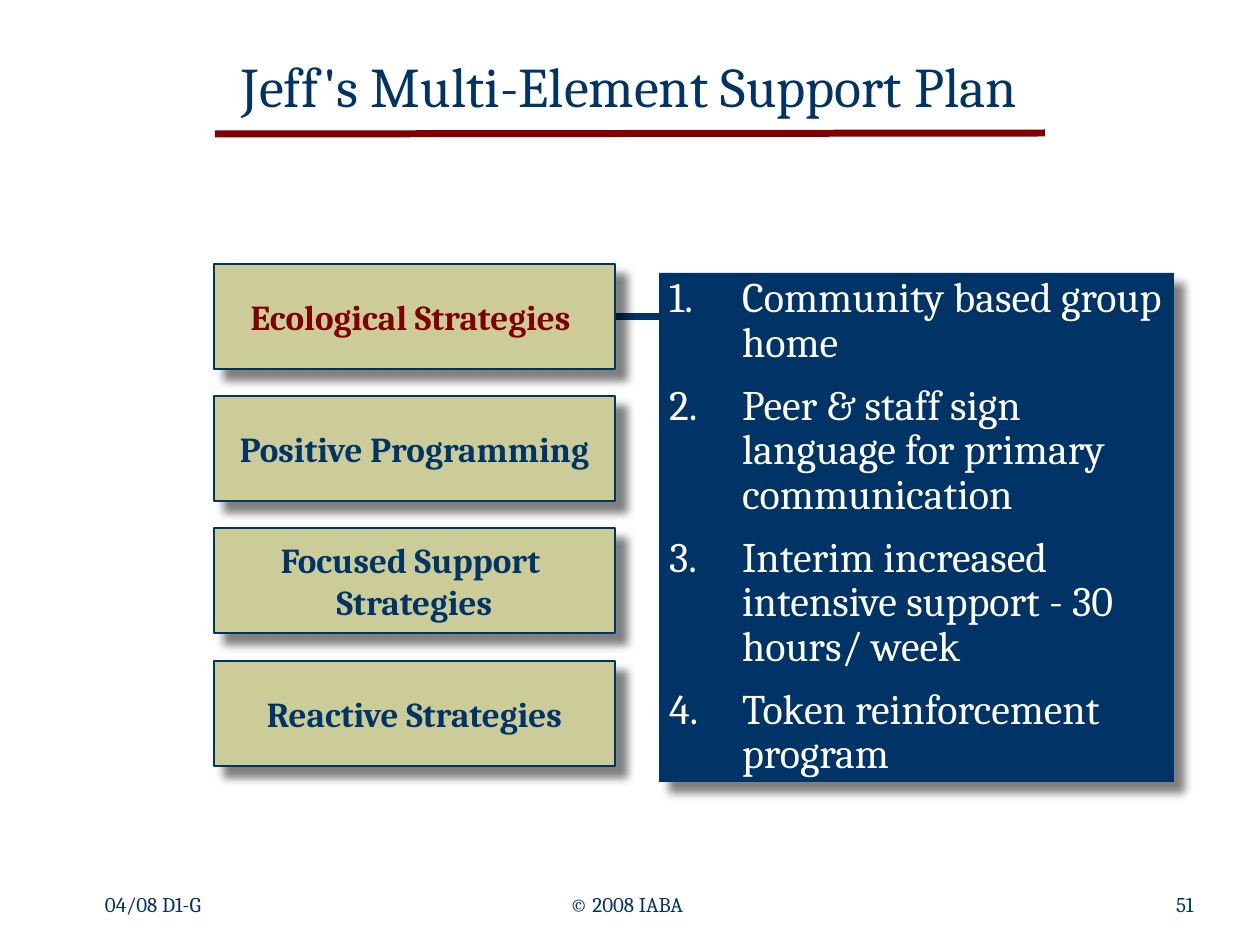
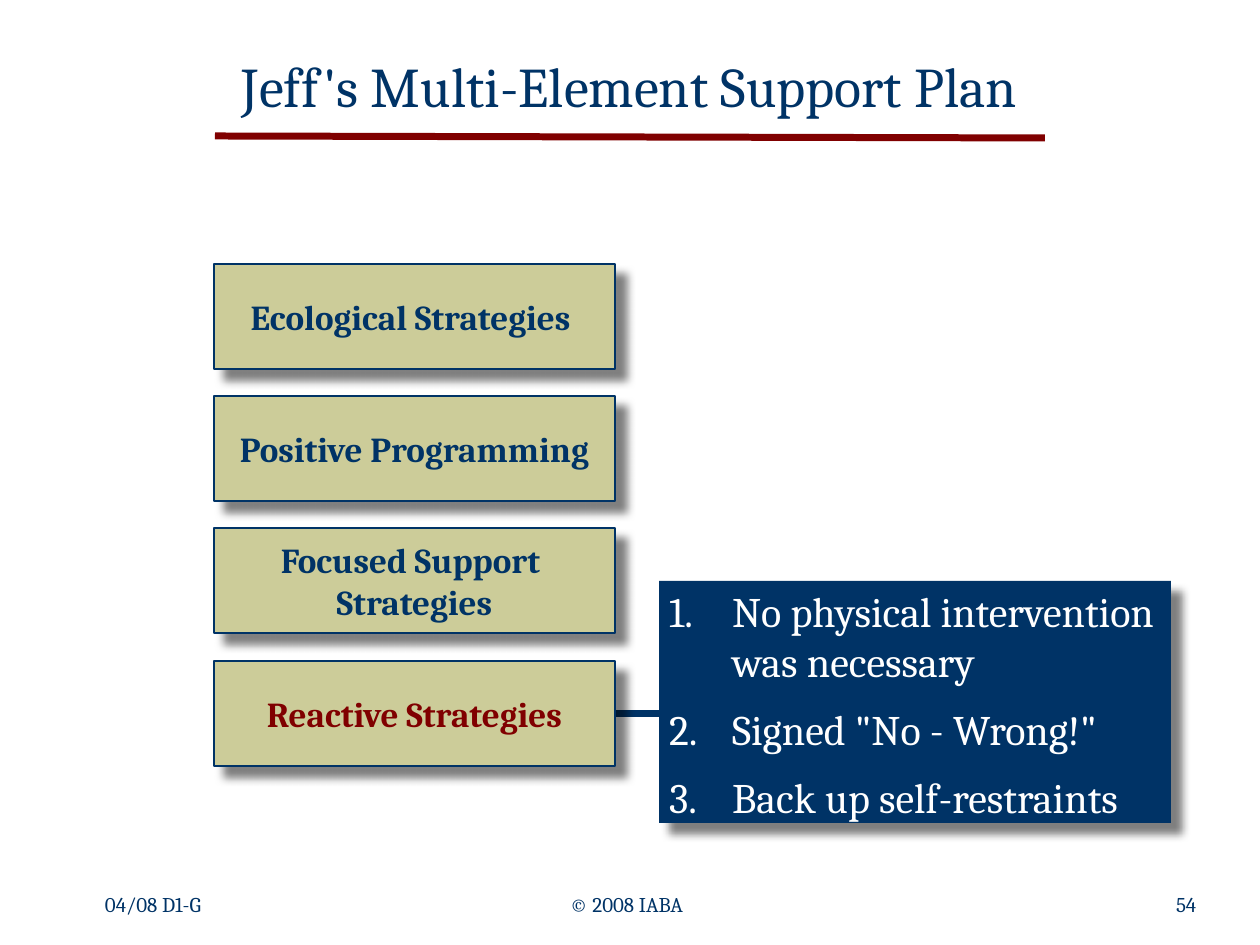
from lxml.etree import SubElement
from pptx import Presentation
from pptx.dml.color import RGBColor
from pptx.enum.shapes import MSO_CONNECTOR, MSO_SHAPE
from pptx.enum.text import MSO_ANCHOR, MSO_AUTO_SIZE, PP_ALIGN
from pptx.oxml.ns import qn
from pptx.util import Pt

EMU_PER_PX = 914400 / 126
FONT = "Cambria"
NAVY, MAROON, SAND, WHITE = "003366", "800000", "CCCC99", "FFFFFF"

TITLE = "Jeff's Multi-Element Support Plan"
STRATEGIES = [
    "Ecological Strategies ",
    "Positive Programming",
    "Focused Support \nStrategies",
    "Reactive Strategies",
]
STRATEGY_LEFT, STRATEGY_TOP, STRATEGY_WIDTH, STRATEGY_HEIGHT = 214, 264, 401, 105
PANEL_LEFT = 659

PLANS = [
    {
        "active": 0,
        "number": "51",
        "rule_ends": (134, 133),
        "panel_box": (PANEL_LEFT, 273, 515, 509),
        "panel_format": {"number_indent": 73, "line_spacing": 0.89},
        "actions": [
            "Community based group home",
            "Peer & staff sign language for primary communication",
            "Interim increased intensive support - 30 hours/ week",
            "Token reinforcement program",
        ],
    },
    {
        "active": 3,
        "number": "54",
        "rule_ends": (136, 138),
        "panel_box": (PANEL_LEFT, 581, 512, 242),
        "panel_format": {"number_indent": 63},
        "actions": [
            "No physical intervention was necessary",
            'Signed "No - Wrong!"',
            "Back up self-restraints",
        ],
    },
]


def px(length):
    return round(length * EMU_PER_PX)


def rgb(hex_color):
    return RGBColor.from_string(hex_color)


def place(shape, box):
    shape.left, shape.top, shape.width, shape.height = map(px, box)


def number_paragraph(paragraph, indent, color):
    properties = paragraph._p.get_or_add_pPr()
    properties.set("marL", str(px(indent)))
    properties.set("indent", str(-px(indent)))
    number_color = SubElement(properties, qn("a:buClr"))
    SubElement(number_color, qn("a:srgbClr"), val=color)
    SubElement(properties, qn("a:buFont"), typeface=FONT)
    SubElement(properties, qn("a:buAutoNum"), type="arabicPeriod")


def write_text(frame, *lines, size, color=NAVY, bold=False, align=PP_ALIGN.LEFT,
               anchor=MSO_ANCHOR.TOP, insets=(13, 6), wrap=True,
               fit=MSO_AUTO_SIZE.NONE, line_spacing=1.0, gap=0, number_indent=0):
    frame.word_wrap = wrap
    frame.auto_size = fit
    frame.vertical_anchor = anchor
    frame.margin_left = frame.margin_right = px(insets[0])
    frame.margin_top = frame.margin_bottom = px(insets[1])
    for index, line in enumerate(lines):
        paragraph = frame.add_paragraph() if index else frame.paragraphs[0]
        paragraph.text = line
        if number_indent:
            number_paragraph(paragraph, number_indent, color)
        paragraph.alignment = align
        paragraph.line_spacing = line_spacing
        paragraph.space_before = Pt(gap if index else 0)
        for run in paragraph.runs:
            run.font.name = FONT
            run.font.size = Pt(size)
            run.font.bold = bold
            run.font.color.rgb = rgb(color)


def cast_shadow(shape):
    effects = SubElement(shape._element.spPr, qn("a:effectLst"))
    shadow = SubElement(effects, qn("a:outerShdw"), blurRad=str(Pt(5)),
                        dist=str(Pt(8.5)), dir="2700000", algn="ctr", rotWithShape="0")
    shadow_color = SubElement(shadow, qn("a:srgbClr"), val="000000")
    SubElement(shadow_color, qn("a:alpha"), val="50000")


def add_line(slide, start, end, color):
    line = slide.shapes.add_connector(MSO_CONNECTOR.STRAIGHT, *map(px, start + end))
    line.line.color.rgb = rgb(color)
    line.line.width = Pt(4)
    SubElement(line._element.spPr, qn("a:effectLst"))
    return line


def add_title(slide, rule_ends):
    title = slide.shapes.title
    place(title, (220, 53, 820, 72))
    write_text(title.text_frame, TITLE, size=32, align=PP_ALIGN.CENTER,
               insets=(10, 4), line_spacing=0.94)
    add_line(slide, (215, rule_ends[0]), (1045, rule_ends[1]), MAROON)


def add_strategy(slide, index, color):
    top = STRATEGY_TOP + index * 397 // 3
    strategy = slide.shapes.add_shape(
        MSO_SHAPE.RECTANGLE,
        *map(px, (STRATEGY_LEFT, top, STRATEGY_WIDTH, STRATEGY_HEIGHT)))
    strategy.fill.solid()
    strategy.fill.fore_color.rgb = rgb(SAND)
    strategy.line.color.rgb = rgb(NAVY)
    strategy.line.width = Pt(1)
    cast_shadow(strategy)
    write_text(strategy.text_frame, STRATEGIES[index], size=20, color=color, bold=True,
               align=PP_ALIGN.CENTER, anchor=MSO_ANCHOR.MIDDLE,
               insets=(14, 8), wrap=False)
    return strategy


def add_strategies(slide, active):
    link = add_line(slide, (STRATEGY_LEFT + STRATEGY_WIDTH, STRATEGY_TOP),
                    (PANEL_LEFT, STRATEGY_TOP), NAVY)
    strategies = [add_strategy(slide, index, MAROON if index == active else NAVY)
                  for index in range(len(STRATEGIES))]
    link.begin_connect(strategies[active], 3)
    link.end_y = link.begin_y


def add_action_panel(slide, box, actions, panel_format):
    panel = slide.placeholders[1]
    place(panel, box)
    panel.fill.solid()
    panel.fill.fore_color.rgb = rgb(NAVY)
    cast_shadow(panel)
    write_text(panel.text_frame, *actions, size=24, color=WHITE, insets=(10, 4),
               gap=10, **panel_format)


def add_footer(slide, number):
    for left, width, text in ((92, 126, "04/08 D1-G"), (557, 145, "© 2008 IABA"),
                              (1163, 47, number)):
        note = slide.shapes.add_textbox(*map(px, (left, 888, width, 35)))
        write_text(note.text_frame, text, size=12, wrap=False, line_spacing=0.9,
                   fit=MSO_AUTO_SIZE.SHAPE_TO_FIT_TEXT)


def main():
    deck = Presentation()
    deck.slide_width, deck.slide_height = px(1260), px(945)
    for plan in PLANS:
        slide = deck.slides.add_slide(deck.slide_layouts[1])
        add_title(slide, plan["rule_ends"])
        add_strategies(slide, plan["active"])
        add_action_panel(slide, plan["panel_box"], plan["actions"], plan["panel_format"])
        add_footer(slide, plan["number"])
    deck.save("out.pptx")


if __name__ == "__main__":
    main()
